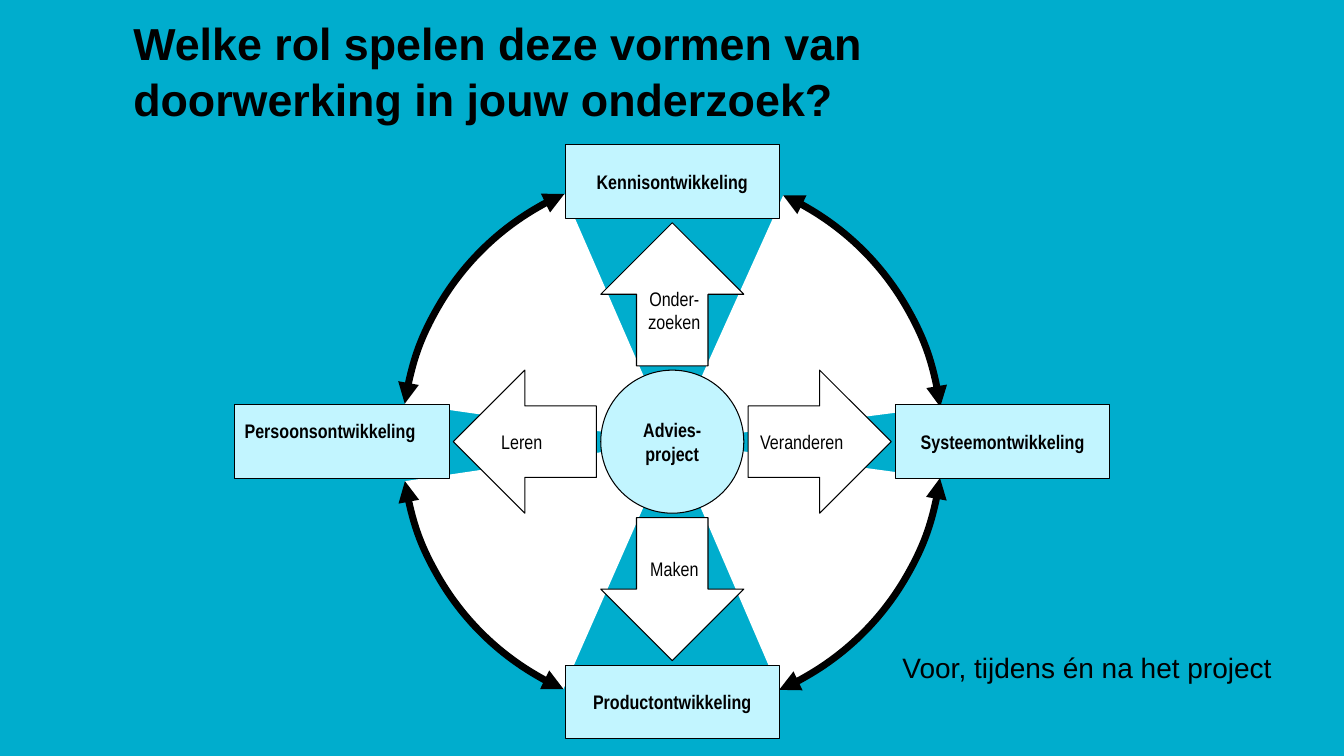
from dataclasses import dataclass
from typing import Any

from lxml.etree import SubElement
from pptx import Presentation
from pptx.dml.color import RGBColor
from pptx.enum.shapes import MSO_SHAPE
from pptx.enum.text import MSO_ANCHOR, MSO_AUTO_SIZE, PP_ALIGN
from pptx.oxml.ns import qn
from pptx.util import Pt


@dataclass(frozen=True)
class Theme:
    background: RGBColor = RGBColor(0x00, 0xAD, 0xCD)
    pale: RGBColor = RGBColor(0xC2, 0xF5, 0xFF)
    white: RGBColor = RGBColor(0xFF, 0xFF, 0xFF)
    ink: RGBColor = RGBColor(0x00, 0x00, 0x00)
    font: str = "Arial"
    narrow: str = "Arial Narrow"
    title_size: float = 32
    remark_size: float = 20
    label_size: float = 14
    outline: float = 0.75
    arc_line: float = 5


@dataclass(frozen=True)
class Margins:
    left: float = 3
    top: float = 3
    right: float = 3
    bottom: float = 3


@dataclass(frozen=True)
class Direction:
    dx: int
    dy: int
    result: str
    activity: str
    arrow: MSO_SHAPE
    arrow_margins: Margins
    result_margins: Margins = Margins(7.2, 3.6, 7.2, 3.6)
    result_align: PP_ALIGN = PP_ALIGN.CENTER


@dataclass(frozen=True)
class Arc:
    start: float
    end: float


THEME = Theme()
CENTER_X, CENTER_Y = 480.2, 315.5
RING = 386
HUB = 102.2
BOX_WIDTH, BOX_HEIGHT = 153.2, 52.6
ARROW_REACH = 105.3
BOX_REACH_X, BOX_REACH_Y = 236, 186
VERTICAL = Margins(3, 0, 0, 3)

ARCS = [
    Arc(294.24, 352.61),
    Arc(188.09, 246.46),
    Arc(113.75, 171.61),
    Arc(7.74, 66.7),
]
DIRECTIONS = [
    Direction(0, -1, "Kennisontwikkeling", "Onder-zoeken", MSO_SHAPE.UP_ARROW, VERTICAL),
    Direction(1, 0, "Systeemontwikkeling", "Veranderen", MSO_SHAPE.RIGHT_ARROW, Margins()),
    Direction(0, 1, "Productontwikkeling", "Maken", MSO_SHAPE.DOWN_ARROW, VERTICAL),
    Direction(-1, 0, "Persoonsontwikkeling", "Leren", MSO_SHAPE.LEFT_ARROW,
              Margins(right=33), Margins(7.2, 3.6, 7.2, 19.6), PP_ALIGN.LEFT),
]


def apply(target: Any, values: dict[str, Any]) -> None:
    for name, value in values.items():
        setattr(target, name, value)


def write(shape: Any, text: str, font: str, size: float, bold: bool,
          align: PP_ALIGN, frame: dict[str, Any]) -> None:
    apply(shape.text_frame, frame)
    paragraph = shape.text_frame.paragraphs[0]
    paragraph.alignment = align
    run = paragraph.add_run()
    run.text = text
    apply(run.font, {"name": font, "size": Pt(size), "bold": bold})
    run.font.color.rgb = THEME.ink


def add_centered(slide: Any, kind: MSO_SHAPE, x: float, y: float, width: float,
                 height: float, fill: RGBColor, line: float) -> Any:
    shape = slide.shapes.add_shape(
        kind, Pt(x - width / 2), Pt(y - height / 2), Pt(width), Pt(height))
    shape.shadow.inherit = False
    shape.fill.solid()
    shape.fill.fore_color.rgb = fill
    shape.line.color.rgb = THEME.ink
    shape.line.width = Pt(line)
    return shape


def add_label(slide: Any, kind: MSO_SHAPE, x: float, y: float, width: float,
              height: float, fill: RGBColor, text: str, bold: bool,
              margins: Margins, align: PP_ALIGN = PP_ALIGN.CENTER) -> None:
    shape = add_centered(slide, kind, x, y, width, height, fill, THEME.outline)
    write(shape, text, THEME.narrow, THEME.label_size, bold, align, {
        "word_wrap": True,
        "vertical_anchor": MSO_ANCHOR.MIDDLE,
        "margin_left": Pt(margins.left),
        "margin_top": Pt(margins.top),
        "margin_right": Pt(margins.right),
        "margin_bottom": Pt(margins.bottom),
    })


def add_arc(slide: Any, arc: Arc) -> None:
    shape = add_centered(slide, MSO_SHAPE.ARC, CENTER_X, CENTER_Y, RING, RING,
                         THEME.white, THEME.arc_line)
    for index, degrees in enumerate((arc.start, arc.end)):
        shape.adjustments[index] = degrees * 0.6
    outline = shape.line._get_or_add_ln()
    for end in ("a:headEnd", "a:tailEnd"):
        SubElement(outline, qn(end), type="triangle")


def add_direction(slide: Any, way: Direction) -> None:
    add_label(slide, MSO_SHAPE.RECTANGLE, CENTER_X + way.dx * BOX_REACH_X,
              CENTER_Y + way.dy * BOX_REACH_Y, BOX_WIDTH, BOX_HEIGHT, THEME.pale,
              way.result, True, way.result_margins, way.result_align)
    add_label(slide, way.arrow, CENTER_X + way.dx * ARROW_REACH,
              CENTER_Y + way.dy * ARROW_REACH, HUB, HUB, THEME.white,
              way.activity, False, way.arrow_margins)


def add_question(slide: Any) -> None:
    question = slide.shapes.title
    apply(question, {"left": Pt(88), "top": Pt(8.6), "width": Pt(648), "height": Pt(85)})
    write(question, "Welke rol spelen deze vormen van doorwerking in jouw onderzoek?",
          THEME.font, THEME.title_size, True, PP_ALIGN.LEFT, {
              "word_wrap": True,
              "auto_size": MSO_AUTO_SIZE.NONE,
              "vertical_anchor": MSO_ANCHOR.BOTTOM,
          })
    question.text_frame.paragraphs[0].line_spacing = 1.05


def add_remark(slide: Any) -> None:
    remark = slide.shapes.add_textbox(Pt(637.5), Pt(461), Pt(280), Pt(31.5))
    write(remark, "Voor, tijdens én na het project", THEME.font, THEME.remark_size,
          False, PP_ALIGN.LEFT, {"word_wrap": False})


def main() -> None:
    deck = Presentation()
    apply(deck, {"slide_width": Pt(960), "slide_height": Pt(540)})
    slide = deck.slides.add_slide(deck.slide_layouts[5])
    slide.background.fill.solid()
    slide.background.fill.fore_color.rgb = THEME.background
    add_question(slide)
    for arc in ARCS:
        add_arc(slide, arc)
    add_label(slide, MSO_SHAPE.OVAL, CENTER_X, CENTER_Y, HUB, HUB, THEME.pale,
              "Advies-project", True, Margins())
    for way in DIRECTIONS:
        add_direction(slide, way)
    add_remark(slide)
    deck.save("out.pptx")


if __name__ == "__main__":
    main()
